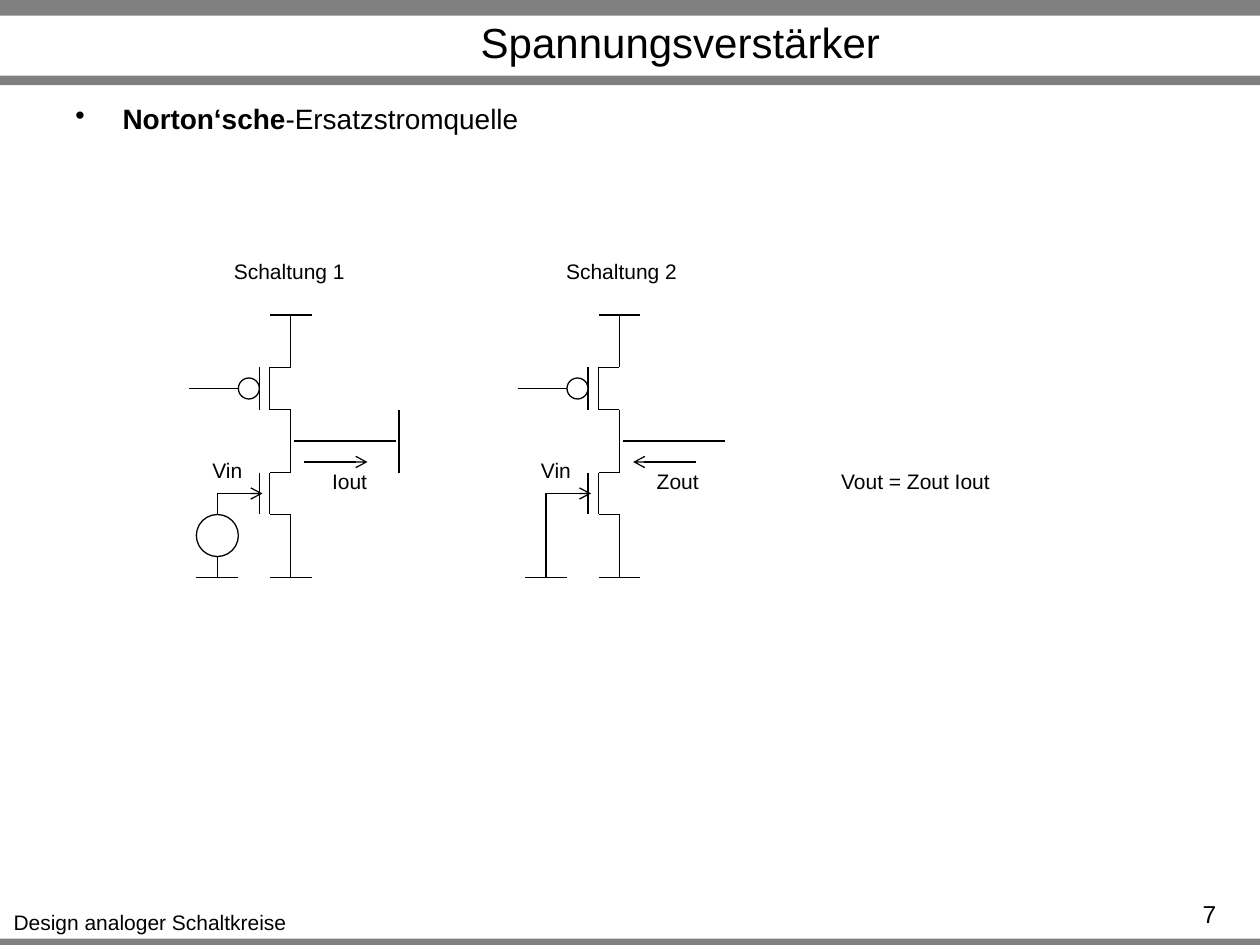
from lxml import etree
from pptx import Presentation
from pptx.dml.color import RGBColor
from pptx.enum.shapes import MSO_CONNECTOR, MSO_SHAPE
from pptx.enum.text import MSO_ANCHOR, PP_ALIGN
from pptx.oxml.ns import qn
from pptx.util import Pt

STRAIGHT = MSO_CONNECTOR.STRAIGHT
RECTANGLE, OVAL = MSO_SHAPE.RECTANGLE, MSO_SHAPE.OVAL
LEFT, CENTER, RIGHT = PP_ALIGN.LEFT, PP_ALIGN.CENTER, PP_ALIGN.RIGHT
TOP, MIDDLE = MSO_ANCHOR.TOP, MSO_ANCHOR.MIDDLE
EMU_PER_PX = 7620
WIDTH, HEIGHT = 1200, 900
FONT = "Arial"
LINE_WIDTH = Pt(0.75)
LABEL_HEIGHT = 36
COLORS = {"ink": "000000", "bar": "808080", "paper": "FFFFFF"}


def px(length):
    """Turn px into EMU."""
    return length * EMU_PER_PX


def color(name):
    """Look up a colour of the slide."""
    return RGBColor.from_string(COLORS[name])


def add_text(slide, box, text, size=12, align=CENTER, anchor=TOP, wrap=False):
    """Place a one-paragraph text box and return its paragraph."""
    frame = slide.shapes.add_textbox(*map(px, box)).text_frame
    frame.word_wrap = wrap
    frame.vertical_anchor = anchor
    paragraph = frame.paragraphs[0]
    paragraph.text = text
    paragraph.alignment = align
    paragraph.font.name = FONT
    paragraph.font.size = Pt(size)
    paragraph.font.color.rgb = color("ink")
    return paragraph


def add_line(shapes, origin, points, arrow=False):
    """Draw a straight line between two points relative to the origin."""
    left, top = origin
    x1, y1, x2, y2 = points
    line = shapes.add_connector(
        STRAIGHT, px(left + x1), px(top + y1), px(left + x2), px(top + y2))
    line.line.color.rgb = color("ink")
    line.line.width = LINE_WIDTH
    properties = line._element.spPr
    if arrow:
        etree.SubElement(properties.find(qn("a:ln")), qn("a:tailEnd"), type="arrow")
    etree.SubElement(properties, qn("a:effectLst"))


def add_circle(slide, origin, x, y, diameter, fill=None):
    """Draw an outlined circle relative to the origin."""
    left, top = origin
    circle = slide.shapes.add_shape(
        OVAL, px(left + x), px(top + y), px(diameter), px(diameter))
    circle.shadow.inherit = False
    if fill:
        circle.fill.solid()
        circle.fill.fore_color.rgb = color(fill)
    else:
        circle.fill.background()
    circle.line.color.rgb = color("ink")
    circle.line.width = LINE_WIDTH


def add_transistor(slide, origin):
    """Draw a grouped transistor whose gate lead starts at the origin."""
    group = slide.shapes.add_group_shape()
    for points in [
        (0, 0, 20, 0), (20, 0, 40, 0), (40, -20, 40, 20), (50, -20, 50, 20),
        (50, -20, 70, -20), (50, 20, 70, 20), (70, -50, 70, -20), (70, 20, 70, 50),
    ]:
        add_line(group.shapes, origin, points)


def add_amplifier(slide, left, top):
    """Draw the stage shared by both circuits, with supply, ground and output."""
    origin = left, top
    for gate_y in (70, 170):
        add_transistor(slide, (left + 27, top + gate_y))
    for points in [
        (77, 0, 117, 0), (97, 0, 97, 30), (0, 70, 67, 70), (100, 120, 197, 120),
        (97, 220, 97, 250), (77, 250, 117, 250), (7, 250, 47, 250), (27, 230, 27, 250),
    ]:
        add_line(slide.shapes, origin, points)
    add_line(slide.shapes, origin, (30, 170, 70, 170), arrow=True)
    add_circle(slide, origin, 47, 60, 20, "paper")
    add_text(slide, (left + 10, top + 130, 53, LABEL_HEIGHT), "Vin")


def add_short_circuit(slide, left, top):
    """Draw circuit 1: driven input and shorted output."""
    origin = left, top
    add_amplifier(slide, left, top)
    add_circle(slide, origin, 7, 190, 40)
    add_line(slide.shapes, origin, (27, 170, 27, 190))
    add_line(slide.shapes, origin, (200, 90, 200, 150))
    add_line(slide.shapes, origin, (110, 140, 170, 140), arrow=True)
    add_text(slide, (left + 124, top + 140, 58, LABEL_HEIGHT), "Iout")
    add_text(slide, (left + 30, top - 60, 131, LABEL_HEIGHT), "Schaltung 1")


def add_open_circuit(slide, left, top):
    """Draw circuit 2: grounded input and output impedance."""
    origin = left, top
    add_amplifier(slide, left, top)
    add_line(slide.shapes, origin, (27, 170, 27, 240))
    add_line(slide.shapes, origin, (170, 140, 110, 140), arrow=True)
    add_text(slide, (left + 120, top + 140, 65, LABEL_HEIGHT), "Zout")
    add_text(slide, (left + 32, top - 60, 134, LABEL_HEIGHT), "Schaltung 2")


def add_frame(slide, title, footer, number):
    """Draw the grey bars, title, footer and page number."""
    for top, height in [(894, 6), (0, 15), (72, 9)]:
        bar = slide.shapes.add_shape(RECTANGLE, 0, px(top), px(WIDTH), px(height))
        bar.shadow.inherit = False
        bar.fill.solid()
        bar.fill.fore_color.rgb = color("bar")
        bar.line.fill.background()
    add_text(slide, (0, 860, 286, LABEL_HEIGHT), footer)
    add_text(slide, (710, 850, 460, 50), number, 14, RIGHT, wrap=True)
    add_text(slide, (156, 17, 984, 45), title, 24, anchor=MIDDLE, wrap=True)


def add_bullet(slide, box, bold_text, plain_text):
    """Place a bullet line that opens in bold."""
    paragraph = add_text(slide, box, bold_text, 16, LEFT, wrap=True)
    properties = paragraph._p.get_or_add_pPr()
    properties.set("marL", str(px(45)))
    properties.set("indent", str(px(-45)))
    bullet = etree.Element(qn("a:buChar"), char="•")
    properties.insert(0, bullet)
    paragraph.runs[0].font.bold = True
    paragraph.add_run().text = plain_text


def main():
    """Build and save the slide."""
    presentation = Presentation()
    presentation.slide_width = px(WIDTH)
    presentation.slide_height = px(HEIGHT)
    slide = presentation.slides.add_slide(presentation.slide_layouts[6])
    add_frame(slide, "Spannungsverstärker", "Design analoger Schaltkreise", "7")
    add_short_circuit(slide, 180, 300)
    add_open_circuit(slide, 493, 300)
    add_text(slide, (788, 440, 168, LABEL_HEIGHT), "Vout = Zout Iout")
    add_bullet(slide, (60, 91, 1080, 70), "Norton‘sche", "-Ersatzstromquelle")
    presentation.save("out.pptx")


if __name__ == "__main__":
    main()
